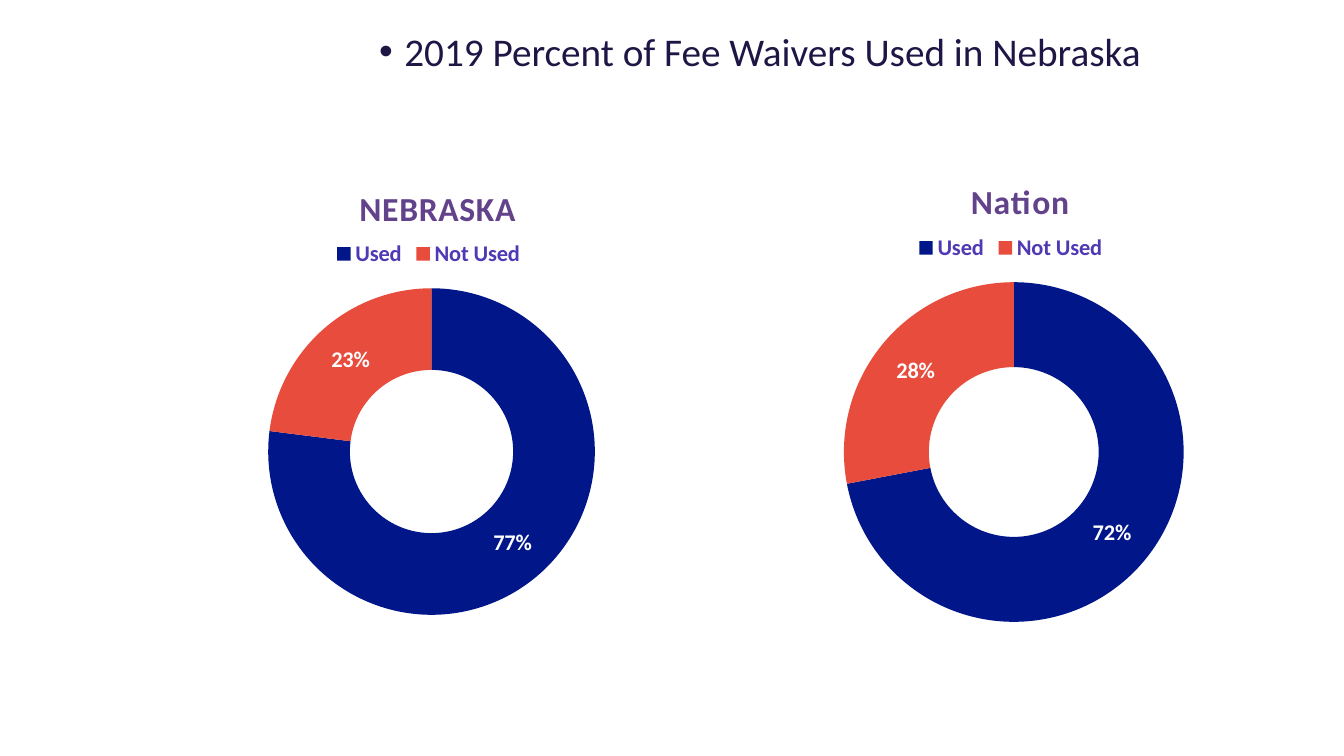
from lxml.etree import SubElement
from pptx import Presentation
from pptx.chart.data import CategoryChartData
from pptx.dml.color import RGBColor
from pptx.enum.chart import XL_CHART_TYPE, XL_LEGEND_POSITION
from pptx.enum.text import MSO_ANCHOR, PP_ALIGN
from pptx.oxml import parse_xml
from pptx.oxml.ns import nsdecls, qn
from pptx.util import Pt

EMU_PER_PX = 9144  # 100 px to the inch
COLORS = {
    "heading": "1F1646",
    "title": "63428C",
    "legend": "5039B5",
    "label": "FFFFFF",
    "used": "001689",
    "not_used": "E74C3C",
}


def px(length):
    return length * EMU_PER_PX


class WaiverSlide:
    font_name = "Calibri"

    def __init__(self, presentation):
        self.slide = presentation.slides.add_slide(presentation.slide_layouts[6])

    def color(self, name):
        return RGBColor.from_string(COLORS[name])

    def style(self, font, size, color, bold=False):
        font.name = self.font_name
        font.size = Pt(size)
        font.bold = bold
        font.color.rgb = self.color(color)

    def bullet_heading(self, text, left, top, width, height):
        box = self.slide.shapes.add_textbox(px(left), px(top), px(width), px(height))
        text_frame = box.text_frame
        text_frame.word_wrap = True
        text_frame.vertical_anchor = MSO_ANCHOR.TOP
        text_frame.text = text
        paragraph = text_frame.paragraphs[0]
        paragraph.alignment = PP_ALIGN.CENTER
        paragraph.line_spacing = 0.9
        properties = paragraph._p.get_or_add_pPr()
        properties.set("marL", str(px(25)))
        properties.set("indent", str(px(-25)))
        SubElement(properties, qn("a:buFont"), typeface="Arial")
        SubElement(properties, qn("a:buChar"), char="•")
        self.style(paragraph.runs[0].font, 28, "heading")

    def place(self, element, position, **fractions):
        """Fix a chart part at fractions of the chart's own size."""
        for layout in element.findall(qn("c:layout")):
            element.remove(layout)
        modes = '<c:xMode val="edge"/><c:yMode val="edge"/>'
        if "w" in fractions:
            modes = '<c:layoutTarget val="inner"/>' + modes
        values = "".join(f'<c:{key} val="{value:.4f}"/>' for key, value in fractions.items())
        element.insert(position, parse_xml(
            f'<c:layout {nsdecls("c")}><c:manualLayout>{modes}{values}'
            "</c:manualLayout></c:layout>"))

    def doughnut(self, title, title_width, values, left, top, width, height):
        data = CategoryChartData()
        data.categories = ["Used", "Not Used"]
        data.add_series("Series 1", values)
        chart = self.slide.shapes.add_chart(
            XL_CHART_TYPE.DOUGHNUT, px(left), px(top), px(width), px(height), data).chart
        self.style(chart.font, 10, "heading")

        # Title
        chart.has_title = True
        chart.chart_title.text_frame.text = title
        run = chart.chart_title.text_frame.paragraphs[0].runs[0]
        self.style(run.font, 24, "title", bold=True)
        run.font._element.set("spc", "50")
        self.place(chart.chart_title._element, 1,
                   x=(width - title_width) / 2 / width, y=24 / height)

        # Legend
        legend_width = 202
        chart.has_legend = True
        chart.legend.position = XL_LEGEND_POSITION.TOP
        chart.legend.include_in_layout = False
        self.style(chart.legend.font, 16, "legend", bold=True)
        self.place(chart.legend._element, 1,
                   x=(width - legend_width) / 2 / width, y=80 / height)

        # Ring, centred below the legend
        ring_top, bottom_margin = 132, 14
        diameter = height - ring_top - bottom_margin
        self.place(chart._chartSpace.chart.plotArea, 0,
                   x=(width - diameter) / 2 / width, y=ring_top / height,
                   w=diameter / width, h=diameter / height)
        plot = chart.plots[0]
        plot.vary_by_categories = True
        for index, name in enumerate(("used", "not_used")):
            point_format = plot.series[0].points[index].format
            point_format.fill.solid()
            point_format.fill.fore_color.rgb = self.color(name)
            point_format.line.fill.background()

        # Percent labels
        plot.has_data_labels = True
        labels = plot.data_labels
        labels.show_percentage = True
        labels.show_value = False
        labels.number_format = "0%"
        labels.number_format_is_linked = False
        self.style(labels.font, 16, "label", bold=True)


def main():
    presentation = Presentation()
    presentation.slide_width, presentation.slide_height = px(1333), px(750)
    slide = WaiverSlide(presentation)
    slide.bullet_heading("2019 Percent of Fee Waivers Used in Nebraska ", 182, 27, 1152, 88)
    slide.doughnut("Nation", 97, (72, 28), 750, 148, 511, 483)
    slide.doughnut("NEBRASKA", 155, (77, 23), 160, 154, 536, 470)
    presentation.save("out.pptx")


if __name__ == "__main__":
    main()
